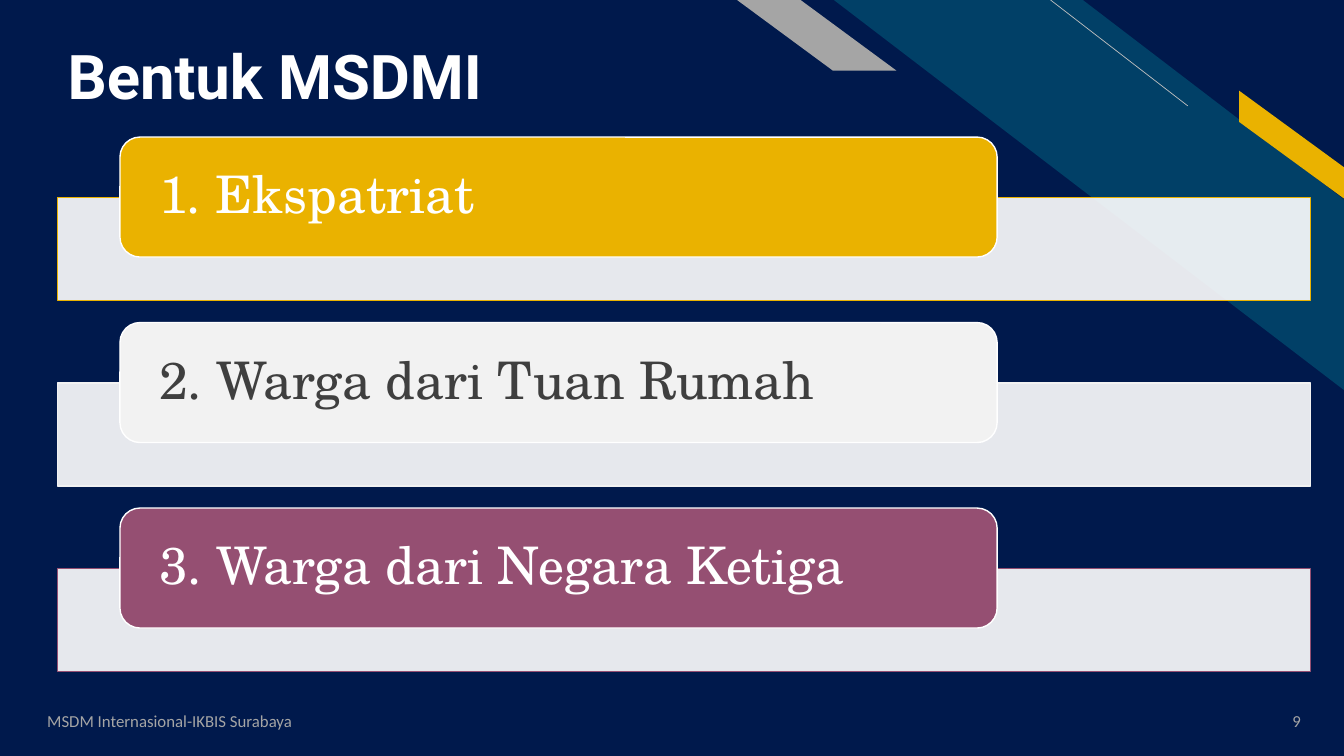
from lxml import etree
from pptx import Presentation
from pptx.dml.color import RGBColor
from pptx.enum.shapes import MSO_CONNECTOR, MSO_SHAPE
from pptx.enum.text import MSO_ANCHOR, MSO_AUTO_SIZE, PP_ALIGN
from pptx.oxml.ns import qn
from pptx.util import Inches, Pt

NAVY = RGBColor(0x00, 0x19, 0x4C)
TEAL = RGBColor(0x01, 0x40, 0x67)
GOLD = RGBColor(0xEA, 0xB2, 0x00)
PLUM = RGBColor(0x95, 0x4F, 0x72)
WHITE = RGBColor(0xFF, 0xFF, 0xFF)
PALE = RGBColor(0xF2, 0xF2, 0xF2)
SILVER = RGBColor(0xBF, 0xBF, 0xBF)
GRAY = RGBColor(0xA5, 0xA5, 0xA5)
DARK = RGBColor(0x3F, 0x3F, 0x3F)

STRIPES = [
    (TEAL, [(8.27, 0), (10.74, 0), (13.33, 1.98), (13.33, 3.87)]),
    (GOLD, [(12.29, 0.9), (13.33, 1.66), (13.33, 1.97), (12.29, 1.21)]),
    (GRAY, [(7.31, 0), (7.94, 0), (8.89, 0.7), (8.26, 0.7)]),
]
FORMS = [
    ("1. Ekspatriat", GOLD, WHITE),
    ("2. Warga dari Tuan Rumah", PALE, DARK),
    ("3. Warga dari Negara Ketiga", PLUM, WHITE),
]
FORM_TOP, FORM_PITCH = 1.36, 1.84


def write(tf, text, font, size, color, bold=False, align=PP_ALIGN.LEFT):
    tf.vertical_anchor = MSO_ANCHOR.MIDDLE
    p = tf.paragraphs[0]
    p.alignment = align
    r = p.add_run()
    r.text = text
    r.font.name = font
    r.font.size = Pt(size)
    r.font.bold = bold
    r.font.color.rgb = color
    return p


def add_footer(s, box, text, align):
    tf = s.shapes.add_textbox(*map(Inches, box)).text_frame
    tf.word_wrap = True
    write(tf, text, "Calibri", 12, GRAY, align=align)


def add_stripe(s, color, points):
    corners = [(Inches(x), Inches(y)) for x, y in points]
    builder = s.shapes.build_freeform(*corners[0])
    builder.add_line_segments(corners[1:])
    sp = builder.convert_to_shape()
    sp.shadow.inherit = False
    sp.fill.solid()
    sp.fill.fore_color.rgb = color
    sp.line.fill.background()


def add_thin_line(s):
    line = s.shapes.add_connector(MSO_CONNECTOR.STRAIGHT, Inches(10.42), Inches(0),
                                  Inches(11.78), Inches(1.05))
    line.line.color.rgb = SILVER
    line.line.width = Pt(0.5)
    etree.SubElement(line._element.spPr, qn("a:effectLst"))


def add_block(s, preset, box, fill, outline):
    sp = s.shapes.add_shape(preset, *map(Inches, box))
    sp.shadow.inherit = False
    sp.fill.solid()
    sp.fill.fore_color.rgb = fill
    sp.line.color.rgb = outline
    sp.line.width = Pt(1)
    return sp


def add_form(s, top, text, color, text_color):
    """A translucent panel with a rounded heading over its upper edge."""
    panel = add_block(s, MSO_SHAPE.RECTANGLE, (0.57, top + 0.6, 12.43, 1.02), WHITE, color)
    fill_color = panel._element.spPr.find(qn("a:solidFill"))[0]
    etree.SubElement(fill_color, qn("a:alpha")).set("val", "90000")

    heading = add_block(s, MSO_SHAPE.ROUNDED_RECTANGLE, (1.19, top, 8.7, 1.19), color, WHITE)
    tf = heading.text_frame
    tf.margin_left = tf.margin_right = Inches(0.33)
    tf.margin_top = tf.margin_bottom = 0
    p = write(tf, text, "TeX Gyre Schola", 37, text_color)
    p.line_spacing = 0.9


def set_title(s, text):
    title = s.shapes.title
    title.left, title.top, title.width, title.height = map(Inches, (0.57, 0.2, 9.11, 1.12))
    tf = title.text_frame
    tf.auto_size = MSO_AUTO_SIZE.NONE
    tf.margin_bottom = 0
    p = write(tf, text, "Roboto", 44, WHITE, bold=True)
    p.line_spacing = 0.9


def main():
    prs = Presentation()
    prs.slide_width, prs.slide_height = Inches(13.33), Inches(7.5)
    s = prs.slides.add_slide(prs.slide_layouts[5])
    s.background.fill.solid()
    s.background.fill.fore_color.rgb = NAVY

    for color, points in STRIPES:
        add_stripe(s, color, points)
    add_thin_line(s)

    set_title(s, "Bentuk MSDMI")
    for i, form in enumerate(FORMS):
        add_form(s, FORM_TOP + i * FORM_PITCH, *form)

    add_footer(s, (0.37, 6.95, 4.5, 0.4), "MSDM Internasional-IKBIS Surabaya", PP_ALIGN.LEFT)
    add_footer(s, (12.19, 6.95, 0.81, 0.4), "9", PP_ALIGN.RIGHT)
    prs.save("out.pptx")


if __name__ == "__main__":
    main()
